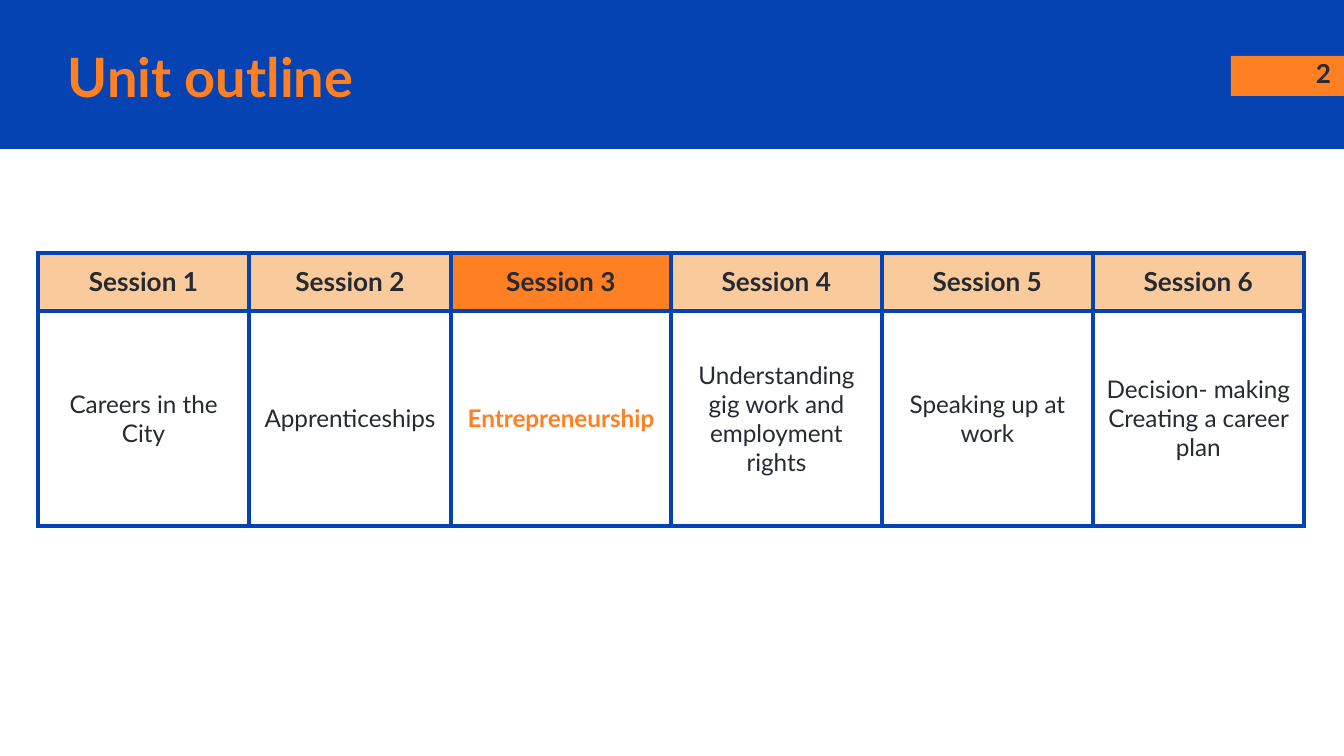
from pptx import Presentation, util as u
from pptx.dml.color import RGBColor
from pptx.enum import shapes, text
from pptx.oxml import parse_xml
from pptx.oxml.ns import nsdecls

COLORS = {"blue": "0543B3", "orange": "FF8022", "peach": "F9CB9C",
          "ink": "262A33", "white": "FFFFFF"}
SCALE = 914400 / 134.4  # EMU per px
INSET = 13


def px(*values):
    return [u.Emu(round(v * SCALE)) for v in values]


def style(tf, size, color, bold, align):
    tf.word_wrap = True
    for p in tf.paragraphs:
        p.alignment = align
        for r in p.runs:
            r.font.name = "Lato"
            r.font.size = u.Pt(size)
            r.font.bold = bold
            r.font.color.rgb = RGBColor.from_string(COLORS[color])


prs = Presentation()
prs.slide_width, prs.slide_height = px(1344, 756)
s = prs.slides.add_slide(prs.slide_layouts[5])

# Header band and page number tab, behind the title
for box, color in [((0, 0, 1344, 149), "blue"), ((1231, 56, 113, 40), "orange")]:
    sp = s.shapes.add_shape(shapes.MSO_SHAPE.RECTANGLE, *px(*box))
    sp.shadow.inherit = False
    sp.fill.solid()
    sp.fill.fore_color.rgb = RGBColor.from_string(COLORS[color])
    sp.line.fill.background()

# Page number
number = s.shapes.add_textbox(*px(1263, 44, 81, 58))
tf = number.text_frame
tf.margin_left, tf.margin_right, tf.margin_top, tf.margin_bottom = px(*[INSET] * 4)
tf.text = "2"
style(tf, 14, "ink", True, text.PP_ALIGN.RIGHT)

# Title
title = s.shapes.title
title.left, title.top, title.width, title.height = px(55, 38, 1137, 75)
tf = title.text_frame
tf.text = "Unit outline"
tf.auto_size = text.MSO_AUTO_SIZE.NONE
tf.vertical_anchor = text.MSO_ANCHOR.MIDDLE
tf.margin_left, tf.margin_right, tf.margin_top, tf.margin_bottom = px(INSET, INSET, 0, 0)
style(tf, 29, "orange", True, text.PP_ALIGN.LEFT)
s.shapes._spTree.append(title._element)

# Session table
topics = ["Careers in the City", "Apprenticeships", "Entrepreneurship",
          "Understanding gig work and employment rights",
          "Speaking up at work", "Decision- making\nCreating a career plan"]
current = 2
widths = [211, 202, 220, 211, 211, 211]
heights = [58, 215]
frame = s.shapes.add_table(2, len(topics), *px(38, 253, sum(widths), sum(heights)))
table = frame.table
for col, width in zip(table.columns, px(*widths)):
    col.width = width
for row, height in zip(table.rows, px(*heights)):
    row.height = height

for i, topic in enumerate(topics):
    active = i == current
    head, body = table.cell(0, i), table.cell(1, i)
    head.text, body.text = f"Session {i + 1}", topic
    style(head.text_frame, 14, "ink", True, text.PP_ALIGN.CENTER)
    style(body.text_frame, 13, "orange" if active else "ink", active,
          text.PP_ALIGN.CENTER)
    body.vertical_anchor = text.MSO_ANCHOR.MIDDLE
    for cell, fill in [(head, "orange" if active else "peach"), (body, "white")]:
        (cell.margin_left, cell.margin_right,
         cell.margin_top, cell.margin_bottom) = px(*[INSET] * 4)
        cell.fill.solid()
        cell.fill.fore_color.rgb = RGBColor.from_string(COLORS[fill])
        # Borders come before the fill in the cell properties
        for k, side in enumerate(["lnL", "lnR", "lnT", "lnB"]):
            cell._tc.get_or_add_tcPr().insert(k, parse_xml(
                f'<a:{side} {nsdecls("a")} w="{u.Pt(2.25)}"><a:solidFill>'
                f'<a:srgbClr val="{COLORS["blue"]}"/></a:solidFill></a:{side}>'))

prs.save("out.pptx")
